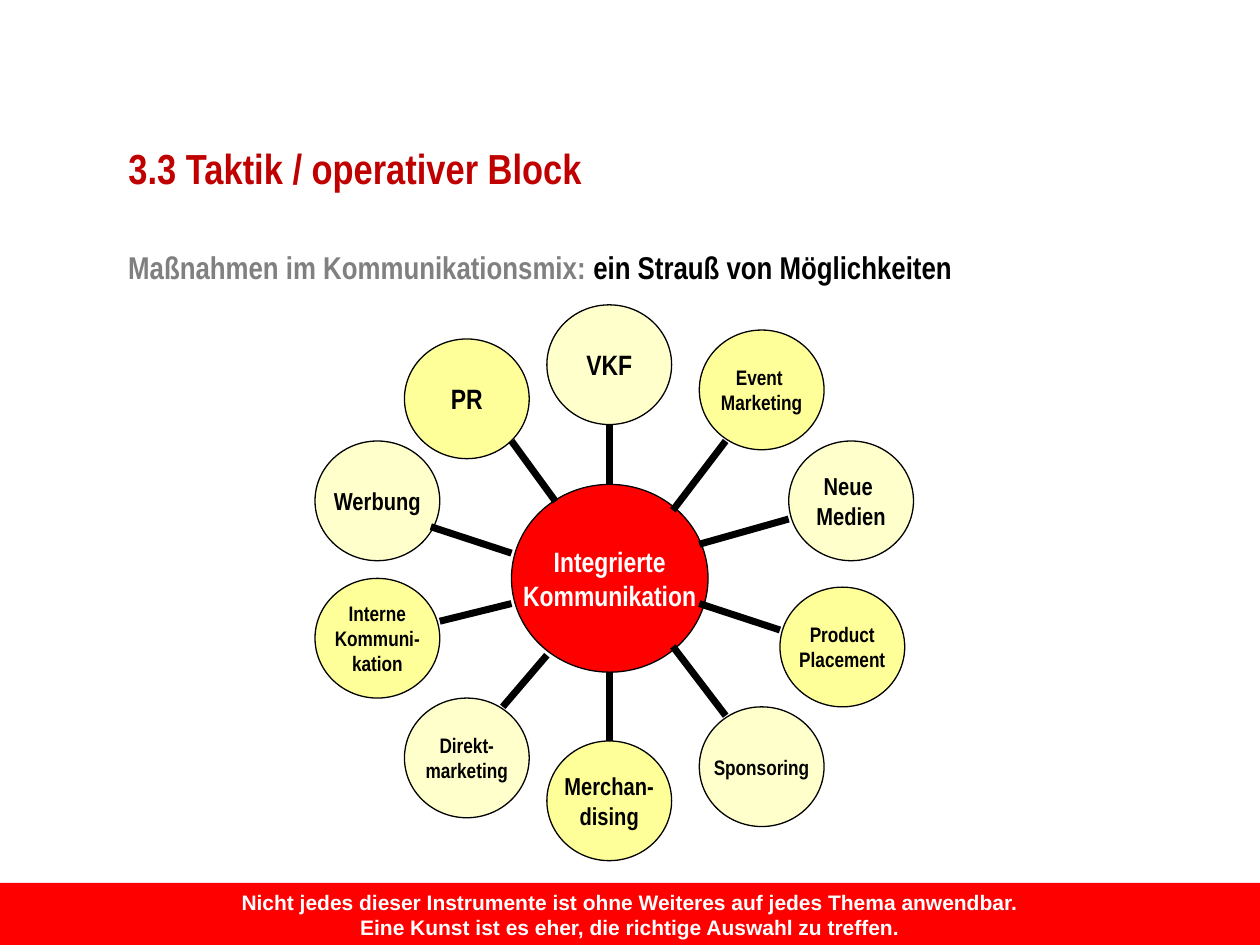
from lxml import etree
from pptx import Presentation
from pptx.dml.color import RGBColor
from pptx.enum.shapes import MSO_CONNECTOR, MSO_SHAPE
from pptx.enum.text import MSO_ANCHOR, MSO_AUTO_SIZE, PP_ALIGN
from pptx.oxml.ns import qn
from pptx.util import Pt

OVAL, RECTANGLE = MSO_SHAPE.OVAL, MSO_SHAPE.RECTANGLE
STRAIGHT = MSO_CONNECTOR.STRAIGHT
LEFT, CENTER = PP_ALIGN.LEFT, PP_ALIGN.CENTER
TOP, MIDDLE = MSO_ANCHOR.TOP, MSO_ANCHOR.MIDDLE
NO_AUTOFIT = MSO_AUTO_SIZE.NONE

COLORS = {
    "red": "FF0000",
    "title": "C00000",
    "gray": "808080",
    "black": "000000",
    "white": "FFFFFF",
    "yellow": "FFFF99",
    "cream": "FFFFCC",
}
NARROW = "Arial Narrow"
BUBBLE_WIDTH, BUBBLE_HEIGHT = 71.3, 68.4

# Counterclockwise around the hub: text, font size, left and top, spoke ends.
# "\n" starts a paragraph, "\v" breaks a line.
INSTRUMENTS = [
    ("PR", 16, (231.1, 193.7), (292.3, 252, 317.5, 286.6)),
    ("Werbung", 14, (180, 252), (246.2, 301, 292.3, 316.1)),
    ("Interne\nKommuni-\nkation", 12, (180, 330.5), (251.3, 355, 292.3, 344.9)),
    ("Direkt-\nmarketing", 12, (231.1, 398.9), (312.5, 374.4, 287.3, 403.9)),
    ("Merchan-\ndising", 14, (312.5, 423.4), (348.5, 384.5, 348.5, 423.4)),
    ("Sponsoring", 12, (399.6, 403.9), (384.5, 369.4, 414.7, 409)),
    ("Product\nPlacement", 12, (445.7, 335.5), (399.6, 344.9, 445.7, 360)),
    ("Neue \nMedien", 14, (450.7, 252), (399.6, 311, 450.7, 296.6)),
    ("Event \vMarketing", 12, (399.6, 188.6), (414.7, 252, 384.5, 291.6)),
    ("VKF", 16, (312.5, 174.2), (348.5, 242.6, 348.5, 276.5)),
]


def color(name):
    return RGBColor.from_string(COLORS[name])


def format_text(text_frame, size, color_name, font_name=NARROW,
                alignment=CENTER, anchor=MIDDLE, wrap=True):
    text_frame.word_wrap = wrap
    text_frame.auto_size = NO_AUTOFIT
    text_frame.vertical_anchor = anchor
    for paragraph in text_frame.paragraphs:
        paragraph.alignment = alignment
        for run in paragraph.runs:
            run.font.name = font_name
            run.font.size = Pt(size)
            run.font.bold = True
            run.font.color.rgb = color(color_name)


def add_title(slide, text):
    title = slide.shapes.title
    title.left, title.top = Pt(66.2), Pt(77.8)
    title.width, title.height = Pt(468), Pt(36)
    title.text_frame.text = text
    format_text(title.text_frame, 24, "title", alignment=LEFT, anchor=TOP)


def add_subtitle(slide, lead, statement):
    box = slide.shapes.add_textbox(Pt(66.2), Pt(138.2), Pt(617.8), Pt(28.8))
    paragraph = box.text_frame.paragraphs[0]
    paragraph.text = lead
    paragraph.add_run().text = statement
    format_text(box.text_frame, 18, "black", alignment=LEFT, anchor=TOP)
    paragraph.runs[0].font.color.rgb = color("gray")


def add_filled_shape(slide, kind, left, top, width, height, fill, text):
    shape = slide.shapes.add_shape(kind, Pt(left), Pt(top), Pt(width), Pt(height))
    shape.shadow.inherit = False
    shape.fill.solid()
    shape.fill.fore_color.rgb = color(fill)
    shape.text_frame.text = text
    return shape


def add_bubble(slide, left, top, width, height, fill, text, size, text_color):
    bubble = add_filled_shape(slide, OVAL, left, top, width, height, fill, text)
    bubble.line.color.rgb = color("black")
    bubble.line.width = Pt(0.75)
    format_text(bubble.text_frame, size, text_color, wrap=False)


def add_spoke(slide, ends):
    spoke = slide.shapes.add_connector(STRAIGHT, *[Pt(value) for value in ends])
    spoke.line.color.rgb = color("black")
    spoke.line.width = Pt(4)
    etree.SubElement(spoke.element.spPr, qn("a:effectLst"))


def add_banner(slide, text):
    banner = add_filled_shape(slide, RECTANGLE, 0, 504.5, 720, 35.5, "red", text)
    banner.line.fill.background()
    format_text(banner.text_frame, 12, "white", font_name="Arial", anchor=TOP)


def main():
    presentation = Presentation()
    presentation.slide_width, presentation.slide_height = Pt(720), Pt(540)
    slide = presentation.slides.add_slide(presentation.slide_layouts[5])

    # Headings
    add_subtitle(slide, "Maßnahmen im Kommunikationsmix: ",
                 "ein Strauß von Möglichkeiten")
    add_title(slide, "3.3 Taktik / operativer Block")

    # Hub with its ring of instruments in alternating shades
    add_bubble(slide, 292.3, 276.8, 112.3, 107.3, "red",
               "Integrierte\vKommunikation", 16, "white")
    for index, (text, size, (left, top), ends) in enumerate(INSTRUMENTS):
        fill = ("yellow", "cream")[index % 2]
        add_bubble(slide, left, top, BUBBLE_WIDTH, BUBBLE_HEIGHT,
                   fill, text, size, "black")
        add_spoke(slide, ends)

    # Closing message
    add_banner(slide, "Nicht jedes dieser Instrumente ist ohne Weiteres auf jedes "
                      "Thema anwendbar.\vEine Kunst ist es eher, die richtige "
                      "Auswahl zu treffen.")

    presentation.save("out.pptx")


if __name__ == "__main__":
    main()
